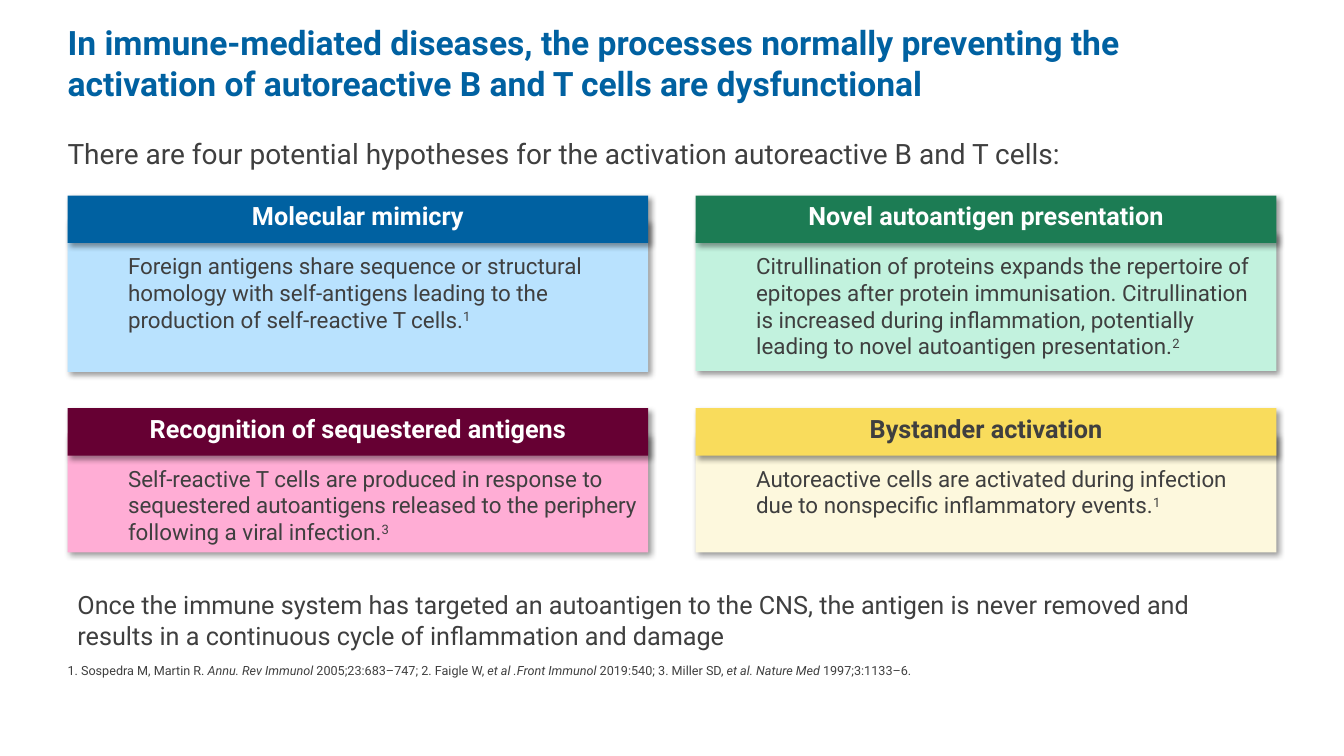
from lxml import etree
from pptx import Presentation
from pptx import util as u
from pptx.dml.color import RGBColor
from pptx.enum import shapes, text
from pptx.oxml.ns import qn

FONT = "Roboto"
BLUE = RGBColor(0x00, 0x61, 0xA1)
PALE_BLUE = RGBColor(0xB9, 0xE2, 0xFE)
GREEN = RGBColor(0x1C, 0x7C, 0x54)
PALE_GREEN = RGBColor(0xC2, 0xF2, 0xDE)
MAROON = RGBColor(0x66, 0x00, 0x33)
PINK = RGBColor(0xFF, 0xAD, 0xD5)
YELLOW = RGBColor(0xF9, 0xDC, 0x5C)
CREAM = RGBColor(0xFD, 0xF8, 0xDD)
GREY = RGBColor(0x3F, 0x3F, 0x3F)
WHITE = RGBColor(0xFF, 0xFF, 0xFF)

LEFT, RIGHT = 0.67, 6.9
CARD_WIDTH, HEADER_HEIGHT = 5.76, 0.47
TEXT_OFFSET = 0.56

HYPOTHESES = [
    (LEFT, 1.94, 2.18, 3.69, BLUE, PALE_BLUE, WHITE, "Molecular mimicry",
     "Foreign antigens share sequence or structural homology with self-antigens "
     "leading to the production of self-reactive T cells.", "1"),
    (RIGHT, 1.94, 2.3, 3.68, GREEN, PALE_GREEN, WHITE, "Novel autoantigen presentation",
     "Citrullination of proteins expands the repertoire of epitopes after protein "
     "immunisation. Citrullination is increased during inflammation, potentially "
     "leading to novel autoantigen presentation.", "2"),
    (LEFT, 4.05, 4.3, 5.48, MAROON, PINK, WHITE, "Recognition of sequestered antigens",
     "Self-reactive T cells are produced in response to sequestered autoantigens "
     "released to the periphery following a viral infection.", "3"),
    (RIGHT, 4.05, 4.3, 5.48, YELLOW, CREAM, GREY, "Bystander activation",
     "Autoreactive cells are activated during infection due to nonspecific "
     "inflammatory events.", "1"),
]

REFERENCES = [
    ("1. Sospedra M, Martin R. ", False),
    ("Annu. Rev Immunol", True),
    (" 2005;23:683–747; 2. Faigle W, ", False),
    ("et al .Front Immunol ", True),
    ("2019:540; 3. Miller SD, ", False),
    ("et al. Nature Med", True),
    (" 1997;3:1133–6.", False),
]


def add_run(paragraph, content, size=16, color=GREY, bold=False, italic=False, raised=False):
    run = paragraph.add_run()
    run.text = content
    font = run.font
    font.name, font.size = FONT, u.Pt(size)
    font.bold, font.italic = bold, italic
    font.color.rgb = color
    if raised:
        font._element.set("baseline", "30000")


class SlideBuilder:
    def __init__(self, presentation):
        self.slide = presentation.slides.add_slide(presentation.slide_layouts[5])

    def prepare(self, shape, inset=0.1, top_inset=0.05, anchor=text.MSO_ANCHOR.TOP,
                alignment=text.PP_ALIGN.LEFT):
        frame = shape.text_frame
        frame.word_wrap = True
        frame.auto_size = text.MSO_AUTO_SIZE.NONE
        frame.vertical_anchor = anchor
        frame.margin_left, frame.margin_right = u.Inches(inset), u.Inches(0.1)
        frame.margin_top, frame.margin_bottom = u.Inches(top_inset), u.Inches(0.05)
        paragraph = frame.paragraphs[0]
        paragraph.alignment = alignment
        return paragraph

    def title(self, content, left, top, width, height):
        shape = self.slide.shapes.title
        shape.left, shape.top = u.Inches(left), u.Inches(top)
        shape.width, shape.height = u.Inches(width), u.Inches(height)
        paragraph = self.prepare(shape, inset=0, anchor=text.MSO_ANCHOR.BOTTOM)
        add_run(paragraph, content, size=24, color=BLUE, bold=True)

    def text_box(self, left, top, width, height, inset=0):
        shape = self.slide.shapes.add_textbox(
            u.Inches(left), u.Inches(top), u.Inches(width), u.Inches(height))
        return self.prepare(shape, inset)

    def rectangle(self, left, top, height, fill, **layout):
        shape = self.slide.shapes.add_shape(
            shapes.MSO_SHAPE.RECTANGLE,
            u.Inches(left), u.Inches(top), u.Inches(CARD_WIDTH), u.Inches(height))
        shape.fill.solid()
        shape.fill.fore_color.rgb = fill
        shape.line.fill.background()
        self.add_shadow(shape)
        return self.prepare(shape, **layout)

    def add_shadow(self, shape):
        shape.shadow.inherit = False
        effects = shape._element.spPr.find(qn("a:effectLst"))
        shadow = etree.SubElement(
            effects, qn("a:outerShdw"), blurRad=str(u.Pt(4)), dist=str(u.Pt(3)),
            dir="2700000", algn="tl", rotWithShape="0")
        color = etree.SubElement(shadow, qn("a:srgbClr"), val="000000")
        etree.SubElement(color, qn("a:alpha"), val="40000")

    def card(self, left, top, panel_top, bottom, dark, light, heading_color,
             heading, description, reference):
        body = self.rectangle(left, panel_top, bottom - panel_top, light,
                              inset=0.6, top_inset=top + TEXT_OFFSET - panel_top)
        add_run(body, description)
        add_run(body, reference, raised=True)
        header = self.rectangle(left, top, HEADER_HEIGHT, dark,
                                alignment=text.PP_ALIGN.CENTER)
        add_run(header, heading, size=18, color=heading_color, bold=True)


def main():
    presentation = Presentation()
    presentation.slide_width = u.Inches(13.33)
    presentation.slide_height = u.Inches(7.5)
    builder = SlideBuilder(presentation)
    builder.title("In immune-mediated diseases, the processes normally preventing the "
                  "activation of autoreactive B and T cells are dysfunctional",
                  LEFT, 0.17, 12, 0.9)
    introduction = builder.text_box(LEFT, 1.31, 12, 0.5)
    add_run(introduction, "There are four potential hypotheses for the activation "
            "autoreactive B and T cells:", size=20)
    for hypothesis in HYPOTHESES:
        builder.card(*hypothesis)
    conclusion = builder.text_box(LEFT, 5.8, 12, 0.71, inset=0.1)
    add_run(conclusion, "Once the immune system has targeted an autoantigen to the CNS, "
            "the antigen is never removed and results in a continuous cycle of "
            "inflammation and damage", size=18)
    references = builder.text_box(LEFT, 6.53, 9.86, 0.51)
    for content, italic in REFERENCES:
        add_run(references, content, size=9, italic=italic)
    presentation.save("out.pptx")


if __name__ == "__main__":
    main()
